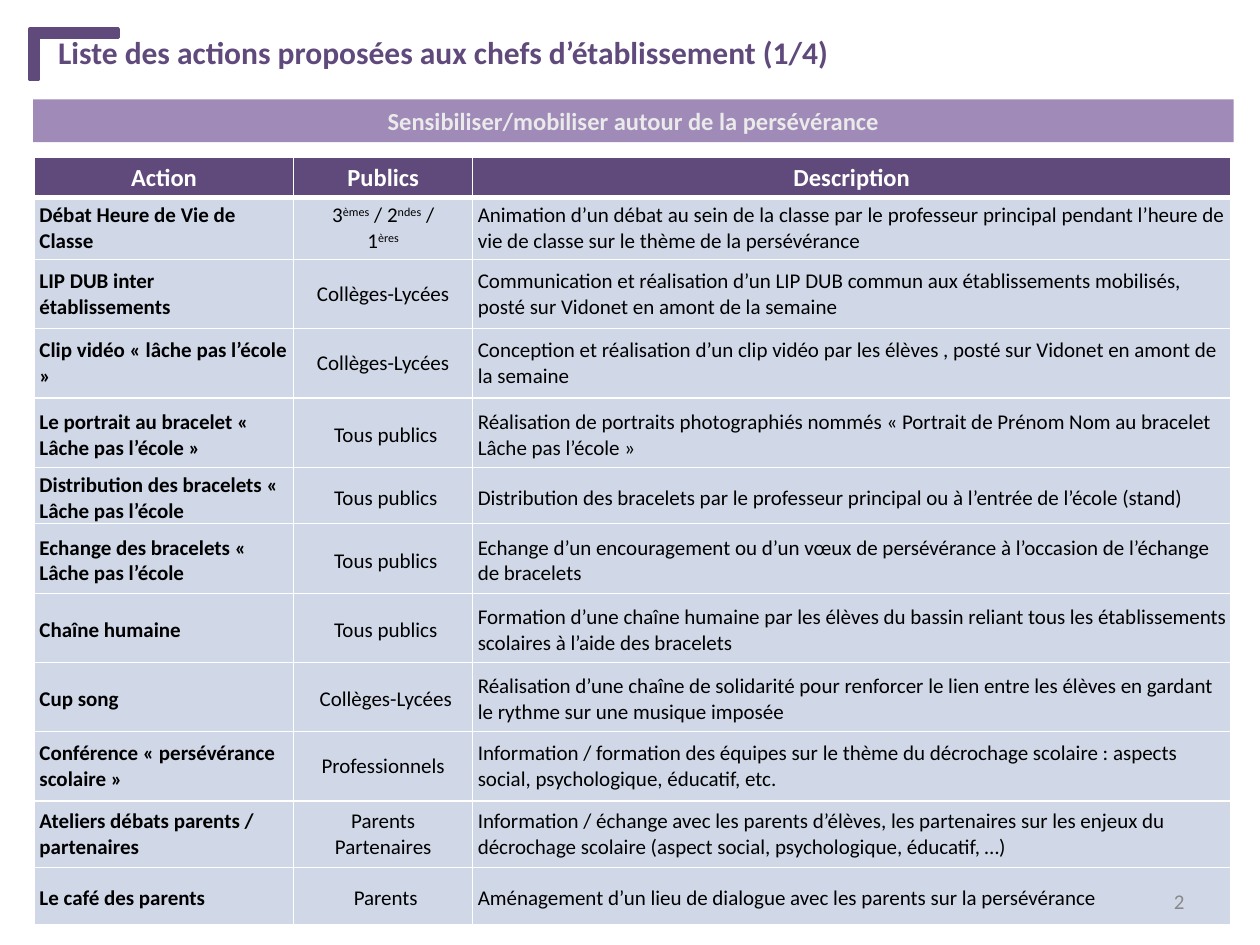
from lxml.etree import SubElement
from pptx import Presentation
from pptx.dml.color import RGBColor
from pptx.enum.shapes import MSO_SHAPE
from pptx.enum.text import MSO_ANCHOR, PP_ALIGN
from pptx.oxml.ns import qn
from pptx.util import Pt

COLORS = {
    "purple": "604A7B", "lilac": "9F8AB8", "row": "D0D8E8", "white": "FFFFFF",
    "black": "000000", "pale": "EAEAEA", "grey": "898989",
}
FONT = "Calibri"
COLUMN_WIDTHS = (148.3, 102.2, 433.3)
HEADER = ("Action", "Publics", "Description")
HEADER_HEIGHT = 22.3
# Height, whether the bottom and right margins are dropped, then the three cells.
ACTIONS = [
    (30.2, False, "Débat Heure de Vie de Classe", "3^èmes^ / 2^ndes^ /\n1^ères^",
     "Animation d’un débat au sein de la classe par le professeur principal pendant "
     "l’heure de vie de classe sur le thème de la persévérance"),
    (39.6, False, "LIP DUB inter établissements", "Collèges-Lycées",
     "Communication et réalisation d’un LIP DUB commun aux établissements mobilisés, "
     "posté sur Vidonet en amont de la semaine"),
    (39.6, False, "Clip vidéo « lâche pas l’école »", "Collèges-Lycées",
     "Conception et réalisation d’un clip vidéo par les élèves , posté sur Vidonet "
     "en amont de la semaine"),
    (39.6, True, "Le portrait au bracelet « Lâche pas l’école »", "Tous publics",
     "Réalisation de portraits photographiés nommés « Portrait de Prénom Nom au "
     "bracelet Lâche pas l’école »"),
    (28.8, True, "Distribution des bracelets « Lâche pas l’école", "Tous publics",
     "Distribution des bracelets par le professeur principal ou à l’entrée de "
     "l’école (stand)"),
    (39.6, True, "Echange des bracelets « Lâche pas l’école", "Tous publics",
     "Echange d’un encouragement ou d’un vœux de persévérance à l’occasion de "
     "l’échange de bracelets"),
    (39.6, True, "Chaîne humaine", "Tous publics",
     "Formation d’une chaîne humaine par les élèves du bassin reliant tous les "
     "établissements scolaires à l’aide des bracelets"),
    (39.6, True, "Cup song", "Collèges-Lycées",
     "Réalisation d’une chaîne de solidarité pour renforcer le lien entre les élèves "
     "en gardant le rythme sur une musique imposée"),
    (39.6, False, "Conférence « persévérance scolaire »", "Professionnels",
     "Information / formation des équipes sur le thème du décrochage scolaire : "
     "aspects social, psychologique, éducatif, etc."),
    (38.2, False, "Ateliers débats parents / partenaires", "Parents\nPartenaires",
     "Information / échange avec les parents d’élèves, les partenaires sur les enjeux "
     "du décrochage scolaire (aspect social, psychologique, éducatif, …)"),
    (32.4, True, "Le café des parents", "Parents",
     "Aménagement d’un lieu de dialogue avec les parents sur la persévérance"),
]


def rgb(name):
    return RGBColor.from_string(COLORS[name])


def write(tf, text, size=12, color="black", bold=False, align=PP_ALIGN.LEFT,
          anchor=MSO_ANCHOR.MIDDLE):
    """Fill a text frame: newlines part paragraphs, carets enclose superscripts."""
    tf.word_wrap = True
    tf.vertical_anchor = anchor
    for i, line in enumerate(text.split("\n")):
        p = tf.add_paragraph() if i else tf.paragraphs[0]
        p.alignment = align
        for j, part in enumerate(line.split("^")):
            if not part:
                continue
            r = p.add_run()
            r.text = part
            r.font.name, r.font.size, r.font.bold = FONT, Pt(size), bold
            r.font.color.rgb = rgb(color)
            if j % 2:
                r.font._element.set("baseline", "30000")


def add_filled(s, kind, box, color):
    sp = s.shapes.add_shape(kind, *map(Pt, box))
    sp.shadow.inherit = False
    sp.fill.solid()
    sp.fill.fore_color.rgb = rgb(color)
    sp.line.fill.background()
    return sp


def add_title(s, box):
    title = s.shapes.title
    title.left, title.top, title.width, title.height = map(Pt, box)
    write(title.text_frame, "Liste des actions proposées aux chefs d’établissement (1/4)",
          size=18, color="purple", bold=True, anchor=MSO_ANCHOR.TOP)


def add_corner(s, box):
    sp = add_filled(s, MSO_SHAPE.CORNER, box, "purple")
    sp.rotation = 90
    sp.adjustments[0], sp.adjustments[1] = 0.16, 0.17
    sp.line.color.rgb = rgb("purple")
    sp.line.width = Pt(2)


def add_banner(s, box):
    sp = add_filled(s, MSO_SHAPE.RECTANGLE, box, "lilac")
    write(sp.text_frame, "Sensibiliser/mobiliser autour de la persévérance",
          size=14, color="pale", bold=True, align=PP_ALIGN.CENTER)


def set_borders(cell, **widths):
    """Draw the white borders of a cell, 0.75 pt unless a side is given."""
    tcPr = cell._tc.get_or_add_tcPr()
    for i, side in enumerate("LRTB"):
        ln = SubElement(tcPr, qn("a:ln" + side), w=str(Pt(widths.get(side, 0.75))))
        fill = SubElement(ln, qn("a:solidFill"))
        SubElement(fill, qn("a:srgbClr"), val=COLORS["white"])
        tcPr.insert(i, ln)


def format_cell(cell, text, fill, trimmed=False, borders=None, **style):
    cell.fill.solid()
    cell.fill.fore_color.rgb = rgb(fill)
    cell.margin_left = cell.margin_top = Pt(3)
    cell.margin_right = cell.margin_bottom = Pt(0 if trimmed else 3)
    set_borders(cell, **(borders or {}))
    write(cell.text_frame, text, **style)
    cell.vertical_anchor = style.get("anchor", MSO_ANCHOR.MIDDLE)


def add_actions_table(s, box):
    frame = s.shapes.add_table(len(ACTIONS) + 1, len(HEADER), *map(Pt, box))
    table = frame.table
    table.horz_banding = False
    for column, width in zip(table.columns, COLUMN_WIDTHS):
        column.width = Pt(width)

    table.rows[0].height = Pt(HEADER_HEIGHT)
    for c, text in enumerate(HEADER):
        format_cell(table.cell(0, c), text, "purple", borders={"B": 3}, size=14,
                    color="white", bold=True, align=PP_ALIGN.CENTER,
                    anchor=MSO_ANCHOR.TOP)

    for i, (height, trimmed, *texts) in enumerate(ACTIONS, 1):
        table.rows[i].height = Pt(height)
        for c, text in enumerate(texts):
            format_cell(table.cell(i, c), text, "row", trimmed,
                        borders={"T": 3} if i == 1 else None, bold=c == 0,
                        align=PP_ALIGN.CENTER if c == 1 else PP_ALIGN.LEFT)
    table.cell(1, 2).text_frame.paragraphs[0].alignment = PP_ALIGN.JUSTIFY


def add_page_number(s, box):
    sp = s.shapes.add_textbox(*map(Pt, box))
    write(sp.text_frame, "2", color="grey", align=PP_ALIGN.RIGHT)


def main():
    prs = Presentation()
    prs.slide_width, prs.slide_height = Pt(720), Pt(540)
    s = prs.slides.add_slide(prs.slide_layouts[5])
    add_title(s, (26, 15.4, 677.5, 29))
    add_actions_table(s, (19.6, 90, sum(COLUMN_WIDTHS), 437))
    add_page_number(s, (516, 500.5, 168, 28.75))
    add_corner(s, (28, 5.8, 28.8, 50.4))
    add_banner(s, (19, 56.8, 686, 24.4))
    prs.save("out.pptx")


if __name__ == "__main__":
    main()
